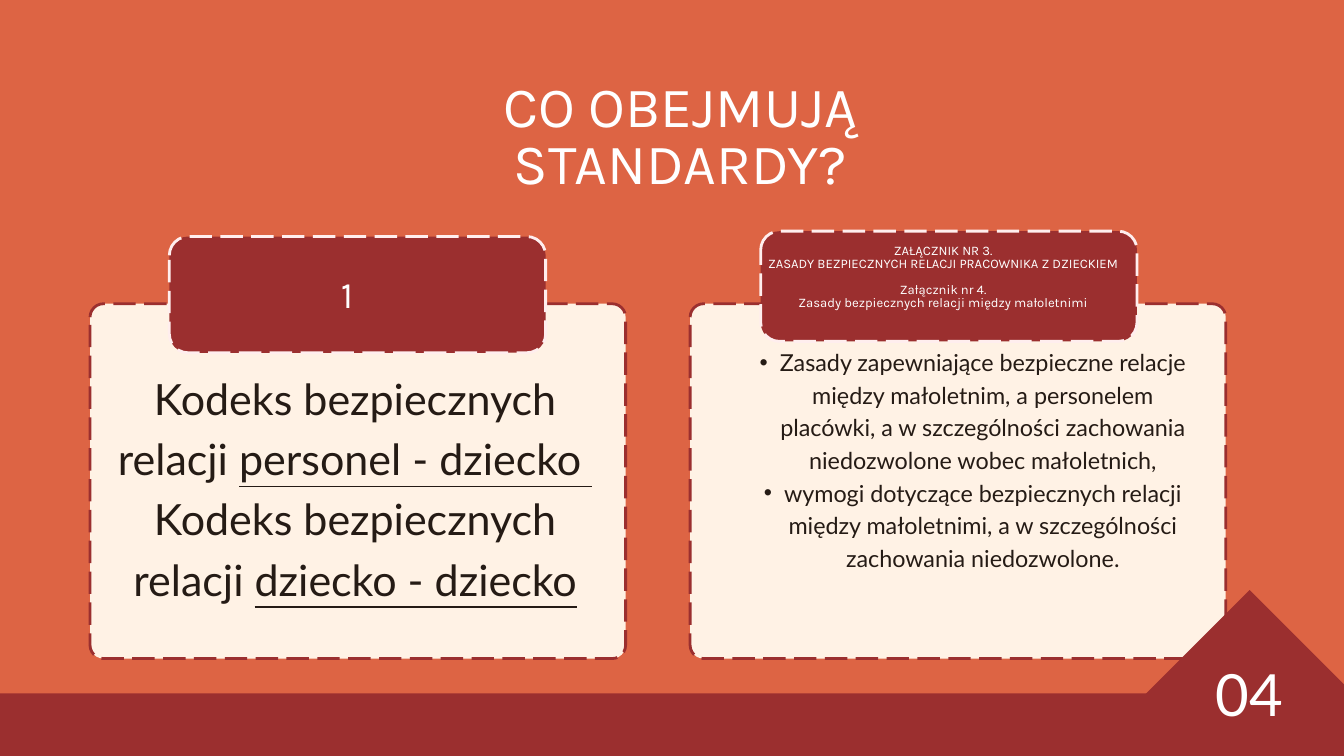
import dataclasses
import typing

import pptx
import pptx.dml.color
import pptx.enum.dml
import pptx.enum.shapes
import pptx.enum.text
import pptx.oxml
import pptx.oxml.ns
import pptx.util

Inches = pptx.util.Inches
Pt = pptx.util.Pt
Shapes = pptx.enum.shapes.MSO_SHAPE


@dataclasses.dataclass(frozen=True)
class Theme:
    orange: str = "DD6444"
    maroon: str = "9B2F2F"
    cream: str = "FFF2E5"
    blush: str = "FFEEEE"
    white: str = "FFFFFF"
    ink: str = "251B15"
    heading: str = "Karla"
    body: str = "Lato"
    title_size: float = 61
    label_size: float = 40
    code_size: float = 46.1
    rules_size: float = 25
    annex_size: float = 14
    number_size: float = 62.3


THEME = Theme()


class Area(typing.NamedTuple):
    left: float
    top: float
    width: float
    height: float

    def lengths(self) -> list:
        return [Inches(value) for value in self]


class Style(typing.NamedTuple):
    font: str
    size: float
    leading: float
    color: str


class Span(typing.NamedTuple):
    text: str
    underline: bool = False


class Para(typing.NamedTuple):
    spans: list[Span]
    bullet: bool = False
    before: float = 0


class Panel(typing.NamedTuple):
    area: Area
    fill: str
    line: str
    radius: float


def rgb(value: str):
    return pptx.dml.color.RGBColor.from_string(value)


def add_block(page, kind, area: Area, fill: str):
    block = page.shapes.add_shape(kind, *area.lengths())
    block.shadow.inherit = False
    block.fill.solid()
    block.fill.fore_color.rgb = rgb(fill)
    block.line.fill.background()
    return block


def add_rounded(page, area: Area, fill: str, radius: float):
    block = add_block(page, Shapes.ROUNDED_RECTANGLE, area, fill)
    block.adjustments[0] = radius / min(area.width, area.height)
    return block


def add_panel(page, panel: Panel) -> None:
    block = add_rounded(page, panel.area, panel.fill, panel.radius)
    block.line.color.rgb = rgb(panel.line)
    block.line.width = Pt(3)
    block.line.dash_style = pptx.enum.dml.MSO_LINE.LONG_DASH


def add_bullet(para) -> None:
    properties = para._p.get_or_add_pPr()
    properties.set("marL", str(Inches(0.59)))
    properties.set("indent", str(Inches(-0.3)))
    namespace = pptx.oxml.ns.nsdecls("a")
    for tag in ('buFont typeface="Arial"', 'buChar char="•"'):
        properties.append(pptx.oxml.parse_xml(f"<a:{tag} {namespace}/>"))


def write(box, style: Style, paras: list[Para]) -> None:
    frame = box.text_frame
    frame.word_wrap = True
    frame.auto_size = pptx.enum.text.MSO_AUTO_SIZE.NONE
    frame.vertical_anchor = pptx.enum.text.MSO_ANCHOR.TOP
    frame.margin_left = frame.margin_right = 0
    frame.margin_top = frame.margin_bottom = 0
    for index, content in enumerate(paras):
        para = frame.add_paragraph() if index else frame.paragraphs[0]
        para.alignment = pptx.enum.text.PP_ALIGN.CENTER
        para.line_spacing = Pt(style.leading)
        para.space_before = Pt(content.before)
        para.font.name = style.font
        para.font.size = Pt(style.size)
        para.font.color.rgb = rgb(style.color)
        if content.bullet:
            add_bullet(para)
        for part in content.spans:
            span = para.add_run()
            span.text = part.text
            if part.underline:
                span.font.underline = True


def add_text(page, area: Area, style: Style, paras: list[Para]) -> None:
    write(page.shapes.add_textbox(*area.lengths()), style, paras)


def main() -> None:
    deck = pptx.Presentation()
    deck.slide_width, deck.slide_height = Inches(20), Inches(11.25)
    page = deck.slides.add_slide(deck.slide_layouts[5])
    page.background.fill.solid()
    page.background.fill.fore_color.rgb = rgb(THEME.orange)

    title = page.shapes.title
    title.left, title.top, title.width, title.height = Area(5.92, 1.22, 8.41, 1.74).lengths()
    title_style = Style(THEME.heading, THEME.title_size, THEME.title_size, THEME.white)
    write(title, title_style, [Para([Span("CO OBEJMUJĄ STANDARDY?")])])

    add_rounded(page, Area(-0.35, 10.32, 20.96, 0.93), THEME.maroon, 0.08)
    cards = [Area(left, 4.52, 7.97, 5.28) for left in (1.34, 10.27)]
    tabs = [Area(2.52, 3.52, 5.6, 1.73), Area(11.32, 3.44, 5.6, 1.64)]
    for card, tab in zip(cards, tabs):
        add_panel(page, Panel(card, THEME.cream, THEME.maroon, 0.2))
        add_panel(page, Panel(tab, THEME.maroon, THEME.blush, 0.28))
    add_block(page, Shapes.DIAMOND, Area(16.59, 8.78, 4.01, 4.01), THEME.maroon)

    label_style = Style(THEME.heading, THEME.label_size, THEME.label_size, THEME.white)
    add_text(page, Area(2.52, 4.14, 5.29, 0.58), label_style, [Para([Span("1")])])

    code_style = Style(THEME.body, THEME.code_size, 64.6, THEME.ink)
    relations = ("personel - dziecko ", "dziecko - dziecko")
    add_text(page, Area(1.42, 5.41, 7.73, 3.56), code_style, [
        Para([Span("Kodeks bezpiecznych relacji "), Span(relation, underline=True)])
        for relation in relations
    ])

    rules_style = Style(THEME.body, THEME.rules_size, 35, THEME.ink)
    rules = (
        "Zasady zapewniające bezpieczne relacje między małoletnim, a personelem placówki, "
        "a w szczególności zachowania niedozwolone wobec małoletnich,",
        "wymogi dotyczące bezpiecznych relacji między małoletnimi, "
        "a w szczególności zachowania niedozwolone.",
    )
    add_text(page, Area(10.98, 5.11, 6.7, 3.82), rules_style,
             [Para([Span(rule)], bullet=True) for rule in rules])

    annex_style = Style(THEME.heading, THEME.annex_size, THEME.annex_size, THEME.white)
    add_text(page, Area(11.26, 3.64, 5.6, 1.52), annex_style, [
        Para([Span("ZAŁĄCZNIK NR 3. ")]),
        Para([Span("ZASADY BEZPIECZNYCH RELACJI PRACOWNIKA Z DZIECKIEM ")]),
        Para([Span("Załącznik nr 4. ")], before=THEME.annex_size),
        Para([Span("Zasady bezpiecznych relacji między małoletnimi ")]),
    ])

    number_style = Style(THEME.body, THEME.number_size, 79.1, THEME.white)
    add_text(page, Area(17.64, 9.74, 1.91, 1.16), number_style, [Para([Span("04")])])

    deck.save("out.pptx")


if __name__ == "__main__":
    main()
